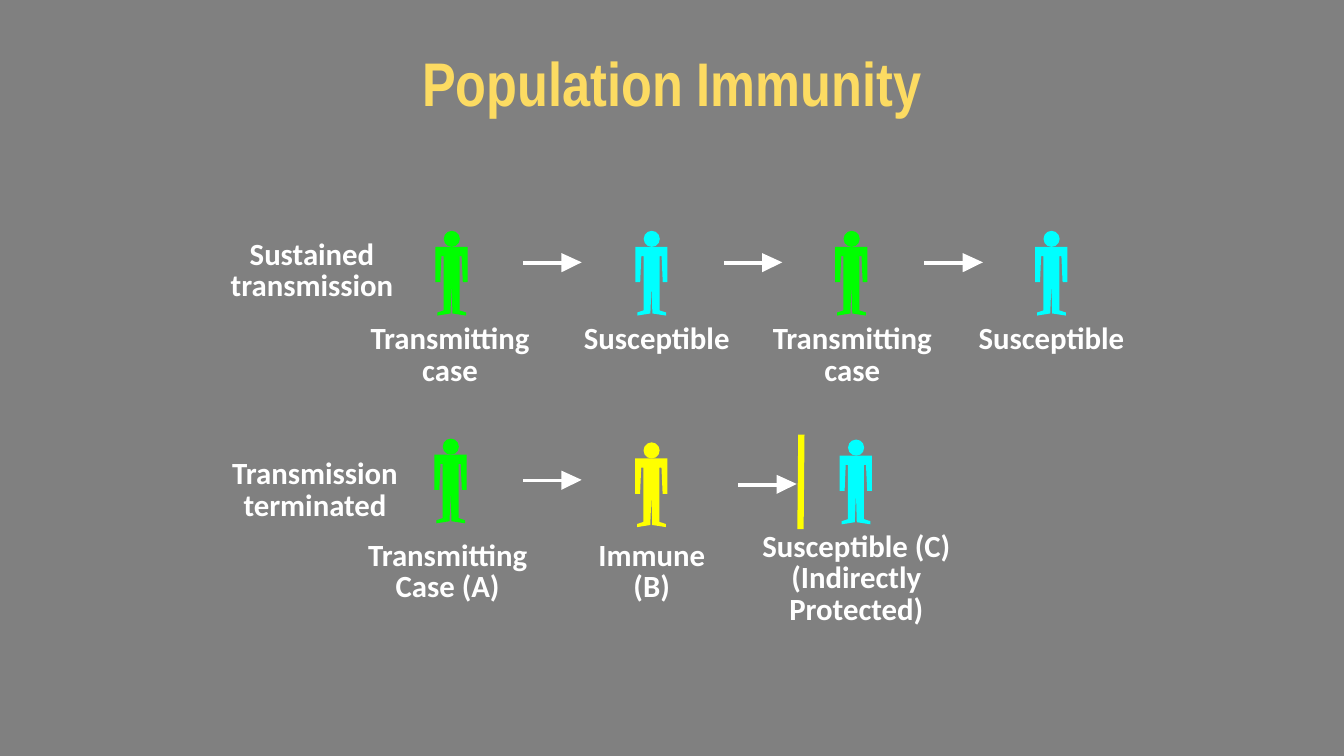
from typing import NamedTuple

from lxml.etree import SubElement
from pptx import Presentation
from pptx.dml.color import RGBColor
from pptx.enum.shapes import MSO_CONNECTOR, MSO_SHAPE
from pptx.enum.text import MSO_ANCHOR, PP_ALIGN
from pptx.oxml.ns import qn
from pptx.util import Pt

GRAY = RGBColor(0x80, 0x80, 0x80)
GOLD = RGBColor(0xFC, 0xDB, 0x62)
WHITE = RGBColor(0xFF, 0xFF, 0xFF)
GREEN = RGBColor(0x00, 0xFF, 0x00)
CYAN = RGBColor(0x00, 0xFF, 0xFF)
YELLOW = RGBColor(0xFF, 0xFF, 0x00)


class Person(NamedTuple):
    left: float
    top: float
    color: RGBColor


class Arrow(NamedTuple):
    left: float
    y: float


class Label(NamedTuple):
    left: float
    top: float
    width: float
    height: float
    lines: tuple[str, ...]


# Outlines, relative to the top left of a body and the start of an arrow
BODY = [(1.4, 49), (1.4, 46.8), (5.9, 45.3), (5.9, 6.5), (4.3, 6.5),
        (3.5, 25.2), (0, 25.2), (0, 0), (23, 0), (23, 25.2), (19.6, 25.2),
        (18.8, 6.5), (17.3, 6.5), (17.3, 45.3), (22, 46.8), (22, 49),
        (12.2, 47.5), (11.6, 26.7), (10.8, 47.5)]
TIP = [(27.4, 6.5), (41.8, -0.6), (27.4, -7.2)]
HEAD = 11.5

# Top row repeats at a fixed step
STEP = 142.8
PEOPLE = [Person(311 + STEP * i, 176.4, color)
          for i, color in enumerate((GREEN, CYAN, GREEN, CYAN))]
PEOPLE += [Person(310.3, 324.8, GREEN), Person(453.7, 327.5, YELLOW),
           Person(599.8, 325.5, CYAN)]
ARROWS = [Arrow(373.7 + 143.3 * i, 188) for i in range(3)]
ARROWS += [Arrow(373.7, 343.4), Arrow(527.3, 346.3)]
LABELS = [
    Label(144.7, 171.4, 156.3, 37.5, ("Sustained", "transmission")),
    Label(246.2, 231.8, 150.5, 37.5, ("Transmitting", "case")),
    Label(399.6, 231.8, 139, 26, ("Susceptible",)),
    Label(533.5, 231.8, 150.5, 37.5, ("Transmitting", "case")),
    Label(679.7, 231.8, 142.5, 32.4, ("Susceptible",)),
    Label(141.1, 328.3, 167.8, 37.5, ("Transmission", "terminated")),
    Label(247, 386.6, 145.5, 48.2, ("Transmitting", "Case (A)")),
    Label(419, 386.6, 93, 24.5, ("Immune (B)",)),
    Label(533.5, 380.2, 156.3, 62,
          ("Susceptible (C)", "(Indirectly", "Protected)")),
]


def paint(shape, color: RGBColor) -> None:
    shape.shadow.inherit = False
    shape.fill.solid()
    shape.fill.fore_color.rgb = color
    shape.line.fill.background()


def outline(shapes, left: float, top: float, points: list, color: RGBColor) -> None:
    spots = [(Pt(left + x), Pt(top + y)) for x, y in points]
    pen = shapes.build_freeform(*spots[0])
    pen.add_line_segments(spots[1:], close=True)
    paint(pen.convert_to_shape(), color)


def stroke(shapes, start: tuple, end: tuple, color: RGBColor, width: float) -> None:
    line = shapes.add_connector(MSO_CONNECTOR.STRAIGHT,
                                *(Pt(n) for n in start + end))
    line.line.color.rgb = color
    line.line.width = Pt(width)
    SubElement(line._element.spPr, qn("a:effectLst"))


def draw_person(shapes, man: Person) -> None:
    outline(shapes, man.left, man.top, BODY, man.color)
    head = shapes.add_shape(MSO_SHAPE.OVAL, Pt(man.left + 6), Pt(man.top - HEAD),
                            Pt(HEAD), Pt(HEAD))
    paint(head, man.color)


def draw_arrow(shapes, arrow: Arrow) -> None:
    stroke(shapes, (arrow.left, arrow.y), (arrow.left + 34, arrow.y), WHITE, 2.5)
    outline(shapes, arrow.left, arrow.y, TIP, WHITE)


def draw_text(shapes, label: Label, font: str, size: float, color: RGBColor,
              space: float):
    box = shapes.add_textbox(*(Pt(n) for n in label[:4]))
    frame = box.text_frame
    frame.word_wrap = True
    frame.margin_left = frame.margin_right = Pt(0)
    frame.margin_top = frame.margin_bottom = Pt(0)
    for i, line in enumerate(label.lines):
        para = frame.add_paragraph() if i else frame.paragraphs[0]
        para.alignment = PP_ALIGN.CENTER
        para.line_spacing = space
        run = para.add_run()
        run.text = line
        run.font.name = font
        run.font.size = Pt(size)
        run.font.bold = True
        run.font.color.rgb = color
    return frame


def main() -> None:
    deck = Presentation()
    deck.slide_width, deck.slide_height = Pt(960), Pt(540)
    slide = deck.slides.add_slide(deck.slide_layouts[6])
    slide.background.fill.solid()
    slide.background.fill.fore_color.rgb = GRAY
    shapes = slide.shapes

    # Title
    title = Label(174.2, 13.7, 612, 90, ("Population Immunity",))
    frame = draw_text(shapes, title, "Arial Narrow", 44, GOLD, 1.0)
    frame.vertical_anchor = MSO_ANCHOR.MIDDLE

    # Chains of people
    for man in PEOPLE:
        draw_person(shapes, man)
    for arrow in ARROWS:
        draw_arrow(shapes, arrow)

    # Captions
    for label in LABELS:
        draw_text(shapes, label, "Calibri", 22, WHITE, 0.85)

    # Barrier before the protected person
    stroke(shapes, (572.4, 310.5), (571.8, 378), YELLOW, 4.5)

    deck.save("out.pptx")


if __name__ == "__main__":
    main()
